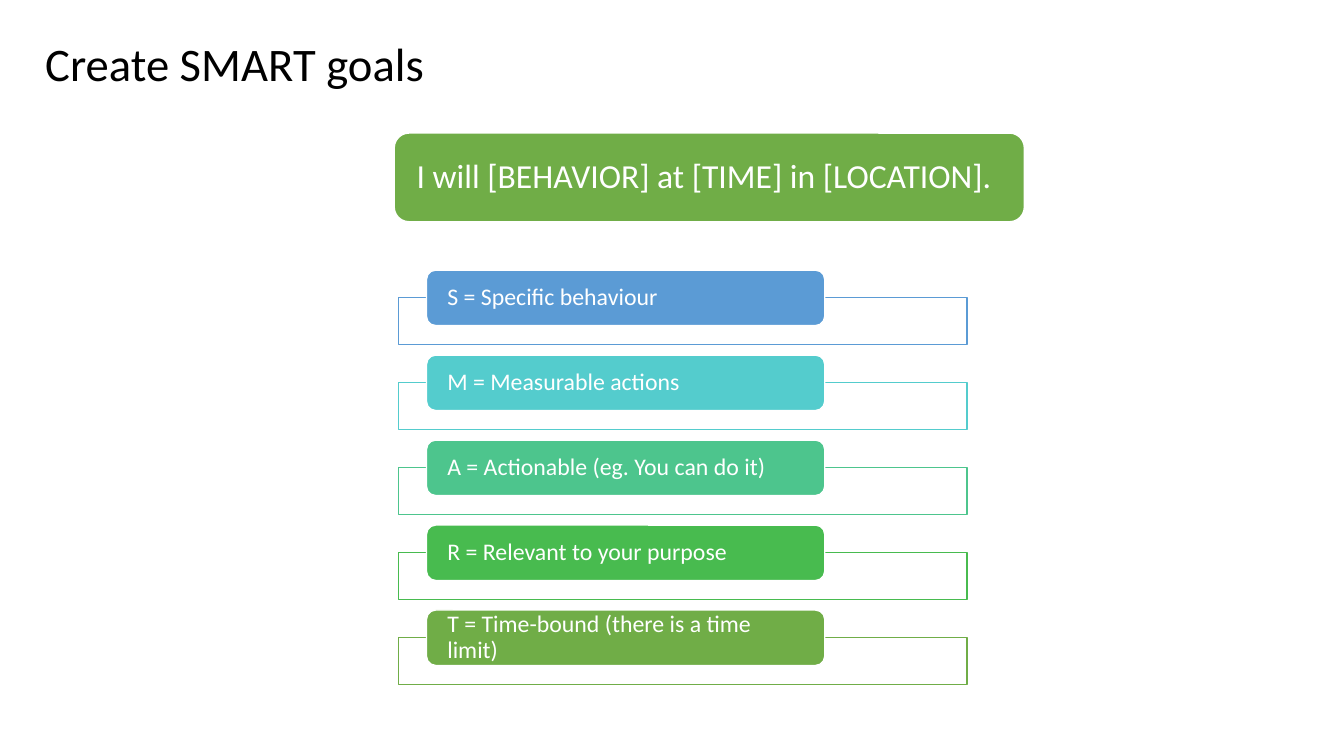
"""Build the SMART goals slide."""
from pptx import Presentation
from pptx.dml.color import RGBColor
from pptx.enum.shapes import MSO_SHAPE
from pptx.enum.text import MSO_ANCHOR, PP_ALIGN
from pptx.oxml.ns import qn
from pptx.util import Inches, Pt
from lxml.etree import SubElement

COLOURS = {
    "black": "000000",
    "white": "FFFFFF",
    "blue": "5B9BD5",
    "cyan": "54CCCD",
    "mint": "4DC58D",
    "green": "48BB4F",
    "olive": "70AD47",
}

GOALS = [
    ("S = Specific behaviour", "blue"),
    ("M = Measurable actions", "cyan"),
    ("A = Actionable (eg. You can do it)", "mint"),
    ("R = Relevant to your purpose", "green"),
    ("T = Time-bound (there is a time limit)", "olive"),
]
FIRST_GOAL_TOP = 2.68
GOAL_PITCH = 0.843


def rgb(name):
    return RGBColor.from_string(COLOURS[name])


def write(frame, text, size, colour, font="Calibri", inset=0.1):
    frame.word_wrap = True
    frame.vertical_anchor = MSO_ANCHOR.MIDDLE
    frame.margin_left = frame.margin_right = Inches(inset)
    frame.margin_top = frame.margin_bottom = 0
    paragraph = frame.paragraphs[0]
    paragraph.alignment = PP_ALIGN.LEFT
    paragraph.line_spacing = 0.9
    run = paragraph.add_run()
    run.text = text
    run.font.name = font
    run.font.size = Pt(size)
    run.font.color.rgb = rgb(colour)


class GoalSlide:
    def __init__(self, deck):
        self.slide = deck.slides.add_slide(deck.slide_layouts[6])
        self.line_width = Pt(1)

    def title(self, text, left, top, width, height):
        heading = self.slide.shapes.add_textbox(
            Inches(left), Inches(top), Inches(width), Inches(height))
        write(heading.text_frame, text, size=33.3, colour="black")

    def box(self, kind, left, top, width, height, fill, line):
        box = self.slide.shapes.add_shape(
            kind, Inches(left), Inches(top), Inches(width), Inches(height))
        box.shadow.inherit = False
        box.fill.solid()
        box.fill.fore_color.rgb = rgb(fill)
        box.line.color.rgb = rgb(line)
        box.line.width = self.line_width
        return box

    def frame(self, left, top, width, height, line):
        frame = self.box(MSO_SHAPE.RECTANGLE, left, top, width, height, "white", line)
        fill_colour = frame.fill._xPr.find(qn("a:solidFill"))[0]
        SubElement(fill_colour, qn("a:alpha")).set("val", "90000")

    def pill(self, text, left, top, width, height, fill, size):
        pill = self.box(MSO_SHAPE.ROUNDED_RECTANGLE, left, top, width, height, fill, "white")
        write(pill.text_frame, text, size=size, colour="white", inset=0.18)


def main():
    deck = Presentation()
    deck.slide_width, deck.slide_height = Inches(13.33), Inches(7.5)
    page = GoalSlide(deck)
    page.title("Create SMART goals", 0.35, 0.34, 5.5, 0.64)
    for row, (goal, colour) in enumerate(GOALS):
        top = FIRST_GOAL_TOP + row * GOAL_PITCH
        page.frame(3.95, top + 0.27, 5.64, 0.47, colour)
        page.pill(goal, 4.23, top, 3.95, 0.55, colour, size=17)
    page.pill("I will [BEHAVIOR] at [TIME] in [LOCATION].",
              3.91, 1.32, 6.25, 0.88, "olive", size=24)
    deck.save("out.pptx")


if __name__ == "__main__":
    main()
